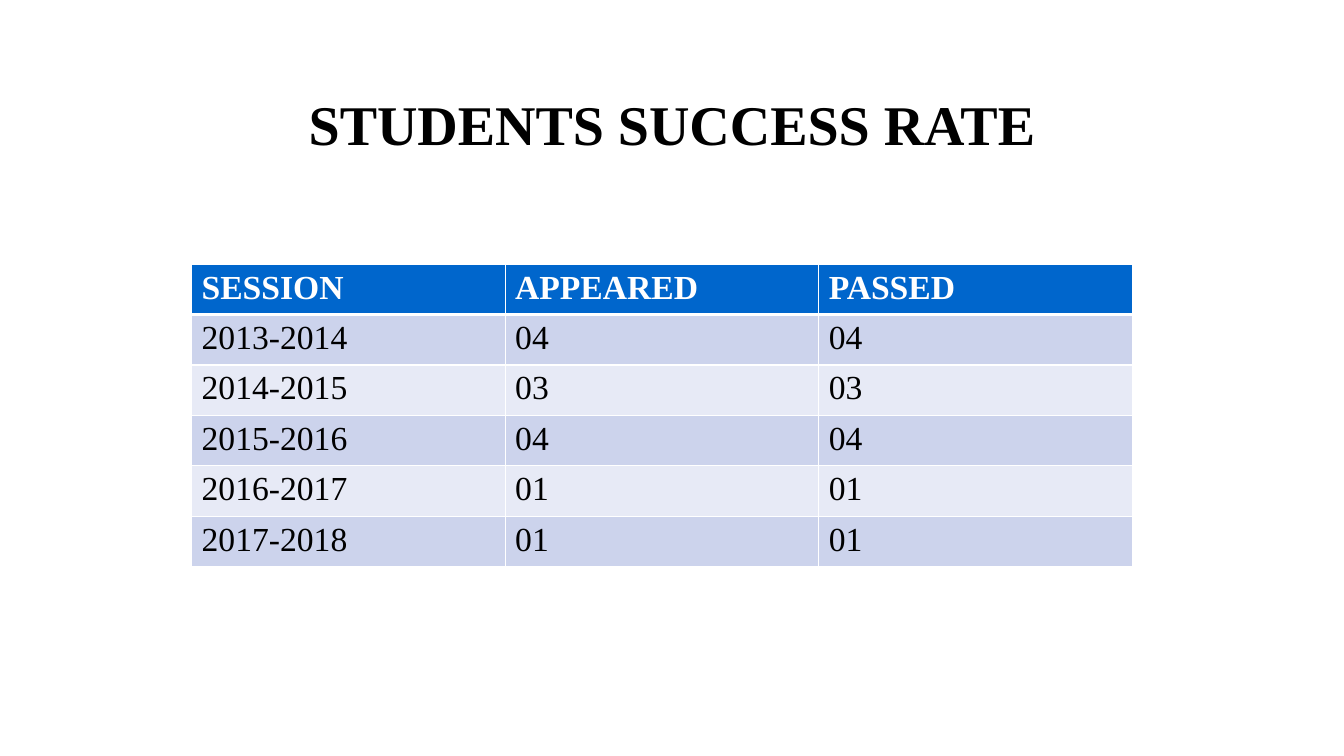
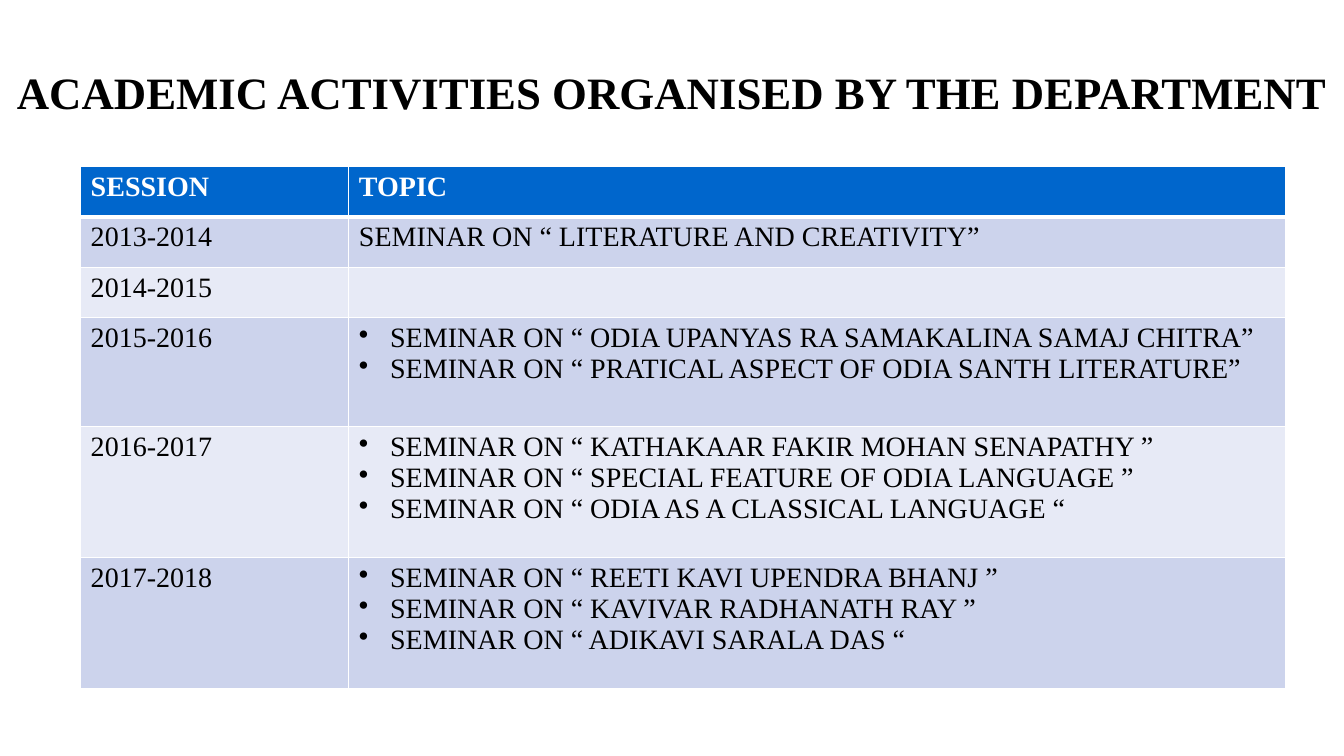
from lxml import etree
from pptx import Presentation
from pptx import util as u
from pptx.dml.color import RGBColor
from pptx.enum import text
from pptx.oxml import ns

# Shared style
FONT = "Times New Roman"
COLOURS = {
    "ink": "000000",
    "paper": "FFFFFF",
    "header": "0066CC",
    "band_dark": "CCD3EC",
    "band_light": "E7EAF6",
}
WIDTH, HEIGHT = u.Inches(13.33), u.Inches(7.5)
BULLET_INDENT = u.Inches(0.31)
THIN, THICK = u.Pt(1), u.Pt(3)

# Content: a list in a cell becomes a bulleted list
RESULTS = [
    ["SESSION", "APPEARED", "PASSED"],
    ["2013-2014", "04", "04"],
    ["2014-2015", "03", "03"],
    ["2015-2016", "04", "04"],
    ["2016-2017", "01", "01"],
    ["2017-2018", "01", "01"],
]
ACTIVITIES = [
    ["SESSION", "TOPIC"],
    ["2013-2014", "SEMINAR ON “ LITERATURE AND CREATIVITY”"],
    ["2014-2015", ""],
    ["2015-2016", [
        "SEMINAR ON “ ODIA UPANYAS RA SAMAKALINA SAMAJ CHITRA”",
        "SEMINAR ON “ PRATICAL ASPECT OF ODIA SANTH LITERATURE”",
    ]],
    ["2016-2017", [
        "SEMINAR ON “ KATHAKAAR FAKIR MOHAN SENAPATHY ”",
        "SEMINAR ON “ SPECIAL FEATURE OF ODIA LANGUAGE ”",
        "SEMINAR ON “ ODIA AS A CLASSICAL LANGUAGE “",
    ]],
    ["2017-2018", [
        "SEMINAR ON “ REETI KAVI UPENDRA BHANJ ”",
        "SEMINAR ON “ KAVIVAR RADHANATH RAY ”",
        "SEMINAR ON “ ADIKAVI SARALA DAS “",
    ]],
]


def colour(name):
    return RGBColor.from_string(COLOURS[name])


def format_runs(paragraph, size, colour_name, bold):
    for run in paragraph.runs:
        run.font.name = FONT
        run.font.size = u.Pt(size)
        run.font.bold = bold
        run.font.color.rgb = colour(colour_name)


def add_title(slide, title, size, top, height):
    """Centred title, anchored in the middle of a full-width band."""
    shape = slide.shapes.add_textbox(0, u.Inches(top), WIDTH, u.Inches(height))
    frame = shape.text_frame
    frame.word_wrap = True
    frame.vertical_anchor = text.MSO_ANCHOR.MIDDLE
    frame.margin_left = frame.margin_right = 0
    frame.text = title
    paragraph = frame.paragraphs[0]
    paragraph.alignment = text.PP_ALIGN.CENTER
    format_runs(paragraph, size, "ink", True)


def add_bullet(paragraph):
    properties = paragraph._p.get_or_add_pPr()
    properties.set("marL", str(BULLET_INDENT))
    properties.set("indent", str(-BULLET_INDENT))
    etree.SubElement(properties, ns.qn("a:buChar")).set("char", "•")


def set_borders(cell, top, bottom):
    properties = cell._tc.get_or_add_tcPr()
    for side, width in (("L", THIN), ("R", THIN), ("T", top), ("B", bottom)):
        line = etree.SubElement(properties, ns.qn(f"a:ln{side}"), w=str(width))
        fill = etree.SubElement(line, ns.qn("a:solidFill"))
        etree.SubElement(fill, ns.qn("a:srgbClr"), val=COLOURS["paper"])


def fill_cell(cell, content, row, size):
    """Header cells are bold on blue; the rows below alternate."""
    is_header = row == 0
    set_borders(cell, THICK if row == 1 else THIN, THICK if is_header else THIN)
    band = "band_dark" if row % 2 else "band_light"
    cell.fill.solid()
    cell.fill.fore_color.rgb = colour("header" if is_header else band)

    bulleted = isinstance(content, list)
    cell.text_frame.text = "\n".join(content) if bulleted else content
    for paragraph in cell.text_frame.paragraphs:
        if bulleted:
            add_bullet(paragraph)
        format_runs(paragraph, size, "paper" if is_header else "ink", is_header)


def add_session_table(slide, rows, left, top, columns, heights, size):
    frame = slide.shapes.add_table(
        len(rows), len(columns), u.Inches(left), u.Inches(top),
        u.Inches(sum(columns)), u.Inches(sum(heights)))
    table = frame.table
    for column, width in zip(table.columns, columns):
        column.width = u.Inches(width)
    for index, (contents, height) in enumerate(zip(rows, heights)):
        table.rows[index].height = u.Inches(height)
        for cell, content in zip(table.rows[index].cells, contents):
            fill_cell(cell, content, index, size)


def main():
    presentation = Presentation()
    presentation.slide_width, presentation.slide_height = WIDTH, HEIGHT
    blank = presentation.slide_layouts[6]

    # Success rate
    slide = presentation.slides.add_slide(blank)
    add_title(slide, "STUDENTS SUCCESS RATE", 40, 0.9, 0.64)
    add_session_table(slide, RESULTS, 1.9, 2.62, [3.11] * 3,
                      [0.5] + [0.47] * 5, 24)

    # Academic activities
    slide = presentation.slides.add_slide(blank)
    add_title(slide, "ACADEMIC ACTIVITIES ORGANISED BY THE DEPARTMENT",
              32, 0.06, 1.69)
    add_session_table(slide, ACTIVITIES, 0.8, 1.65, [2.66, 9.29],
                      [0.5] * 3 + [1.08] + [1.3] * 2, 20)

    presentation.save("out.pptx")


if __name__ == "__main__":
    main()
